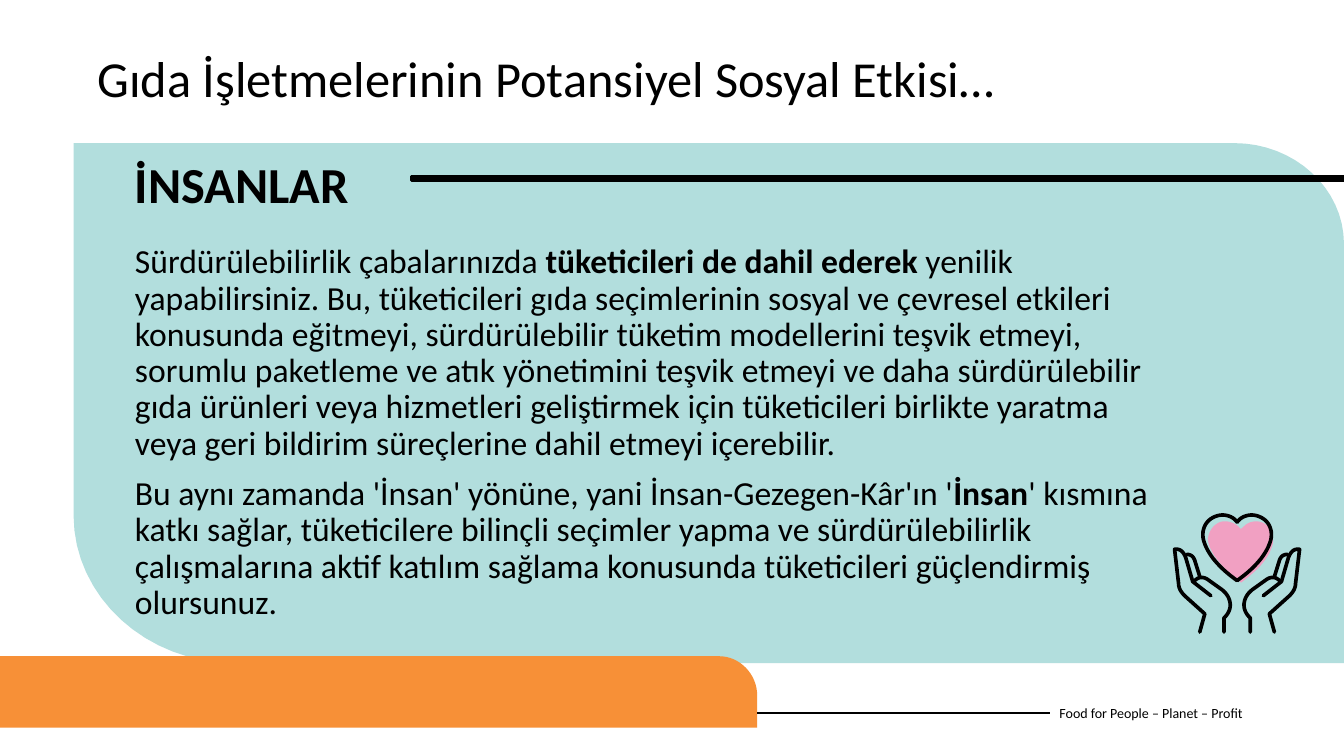
"""Builds the slide on the social impact of food businesses: people."""
from pptx import Presentation
from pptx.dml.color import RGBColor
from pptx.enum.shapes import MSO_CONNECTOR, MSO_SHAPE
from pptx.enum.text import MSO_ANCHOR
from pptx.oxml.ns import qn
from pptx.util import Inches, Pt
from lxml import etree


def paint(sp, fill=None, line=None, width=0):
    """Set fill and line of a shape from hex strings; None means none."""
    sp.shadow.inherit = False
    if fill:
        sp.fill.solid()
        sp.fill.fore_color.rgb = RGBColor.from_string(fill)
    else:
        sp.fill.background()
    if line:
        sp.line.color.rgb = RGBColor.from_string(line)
        sp.line.width = Pt(width)
    else:
        sp.line.fill.background()


def outline(shapes, start, segments, closed=True, mirror=None):
    """Draw a freeform; a segment is a line (x, y) or a cubic curve (six numbers)."""
    points = [start]
    for seg in segments:
        if len(seg) == 2:
            points.append(seg)
            continue
        x0, y0 = points[-1]
        x1, y1, x2, y2, x3, y3 = seg
        for i in range(1, 17):
            t = i / 16
            a, b, c, d = (1 - t) ** 3, 3 * t * (1 - t) ** 2, 3 * t * t * (1 - t), t ** 3
            points.append((a * x0 + b * x1 + c * x2 + d * x3,
                           a * y0 + b * y1 + c * y2 + d * y3))
    if mirror:
        points = [(2 * mirror - x, y) for x, y in points]
    points = [(Inches(x), Inches(y)) for x, y in points]
    builder = shapes.build_freeform(*points[0])
    builder.add_line_segments(points[1:], close=closed)
    return builder.convert_to_shape()


prs = Presentation()
prs.slide_width, prs.slide_height = Inches(13.33), Inches(7.5)
shapes = prs.slides.add_slide(prs.slide_layouts[6]).shapes

panel = outline(shapes, (0.73, 1.42), [
    (12.24, 1.42), (12.84, 1.42, 13.33, 1.87, 13.33, 2.42), (13.33, 6.58),
    (2.34, 6.58), (1.45, 6.58, 0.73, 5.92, 0.73, 5.11)])
paint(panel, "B2DEDD")
band = outline(shapes, (0, 6.51), [
    (7.13, 6.51), (7.34, 6.51, 7.51, 6.69, 7.51, 6.9), (7.51, 7.22), (0, 7.22)])
paint(band, "F79037")
bar = shapes.add_shape(MSO_SHAPE.RECTANGLE, Inches(4.08), Inches(1.75),
                       Inches(9.25), Inches(0.04))
paint(bar, "000000", "000000", 1.93)

texts = [
    ((10.41, 6.87, 2.73, 0.4), 10, None, [[("Food for People – Planet – Profit", False)]]),
    ((1.24, 2.38, 10.55, 3.76), 24, 0.9, [
        [("Sürdürülebilirlik çabalarınızda ", False),
         ("tüketicileri de dahil ederek ", True),
         ("yenilik yapabilirsiniz. Bu, tüketicileri gıda seçimlerinin sosyal ve çevresel "
          "etkileri konusunda eğitmeyi, sürdürülebilir tüketim modellerini teşvik etmeyi, "
          "sorumlu paketleme ve atık yönetimini teşvik etmeyi ve daha sürdürülebilir gıda "
          "ürünleri veya hizmetleri geliştirmek için tüketicileri birlikte yaratma veya "
          "geri bildirim süreçlerine dahil etmeyi içerebilir.", False)],
        [("Bu aynı zamanda 'İnsan' yönüne, yani İnsan-Gezegen-Kâr'ın '", False),
         ("İnsan", True),
         ("' kısmına katkı sağlar, tüketicilere bilinçli seçimler yapma ve sürdürülebilirlik "
          "çalışmalarına aktif katılım sağlama konusunda tüketicileri güçlendirmiş "
          "olursunuz.", False)]]),
    ((0.87, 0.49, 11.59, 0.88), 36, 0.9,
     [[("Gıda İşletmelerinin Potansiyel Sosyal Etkisi…", False)]]),
    ((1.24, 1.47, 2.67, 0.71), 36, None, [[("İNSANLAR", True)]]),
]

boxes = []
for box, size, spacing, paragraphs in texts:
    sp = shapes.add_textbox(*map(Inches, box))
    boxes.append(sp)
    tf = sp.text_frame
    tf.word_wrap = True
    for i, runs in enumerate(paragraphs):
        p = tf.add_paragraph() if i else tf.paragraphs[0]
        if spacing:
            p.line_spacing = spacing
            p.space_before = Pt(10)
        for text, bold in runs:
            r = p.add_run()
            r.text = text
            r.font.name = "Calibri"
            r.font.size = Pt(size)
            r.font.bold = bold
            r.font.color.rgb = RGBColor.from_string("000000")

footer = boxes[0]
footer.text_frame.vertical_anchor = MSO_ANCHOR.MIDDLE
rule = shapes.add_connector(MSO_CONNECTOR.STRAIGHT, Inches(7.51), Inches(7.07),
                            Inches(10.41), Inches(7.07))
rule.end_connect(footer, 1)
rule.line.color.rgb = RGBColor.from_string("000000")
rule.line.width = Pt(1.5)
etree.SubElement(rule._element.spPr, qn("a:effectLst"))

icon = shapes.add_group_shape().shapes
pink_heart = outline(icon, (11.98, 5.35), [
    (11.99, 5.27, 12.03, 5.21, 12.1, 5.18), (12.16, 5.16, 12.24, 5.18, 12.29, 5.23),
    (12.3, 5.25, 12.31, 5.25, 12.33, 5.23), (12.35, 5.21, 12.37, 5.19, 12.41, 5.18),
    (12.5, 5.15, 12.6, 5.21, 12.62, 5.3), (12.63, 5.35, 12.63, 5.4, 12.61, 5.44),
    (12.56, 5.58, 12.43, 5.69, 12.31, 5.78), (12.2, 5.69, 12, 5.53, 11.98, 5.35)])
paint(pink_heart, "F1A0C2")

axis = 12.27
heart_half = ((axis, 5.18), [
    (12.22, 5.11, 12.12, 5.09, 12.04, 5.13), (11.95, 5.17, 11.91, 5.27, 11.94, 5.37),
    (11.99, 5.53, 12.13, 5.66, axis, 5.76)])
palm = ((11.9, 6.27), [
    (11.95, 6.09), (11.75, 5.91), (11.71, 5.87, 11.69, 5.83, 11.69, 5.79), (11.65, 5.45),
    (11.71, 5.44, 11.74, 5.48, 11.76, 5.53), (11.83, 5.77), (12.01, 5.91)])
finger = ((11.77, 5.5), [(11.82, 5.5, 11.84, 5.53, 11.85, 5.56), (11.9, 5.72)])
thumb = ((11.85, 5.76), [
    (11.9, 5.71, 11.95, 5.73, 11.98, 5.75), (12.12, 5.85),
    (12.22, 5.93, 12.23, 6.05, 12.14, 6.13), (12.14, 6.27)])
for start, segments in (heart_half, palm, finger, thumb):
    for mirror in (None, axis):
        stroke = outline(icon, start, segments, False, mirror)
        paint(stroke, line="000000", width=2.6)
        stroke._element.spPr.find(qn("a:ln")).set("cap", "rnd")

prs.save("out.pptx")
